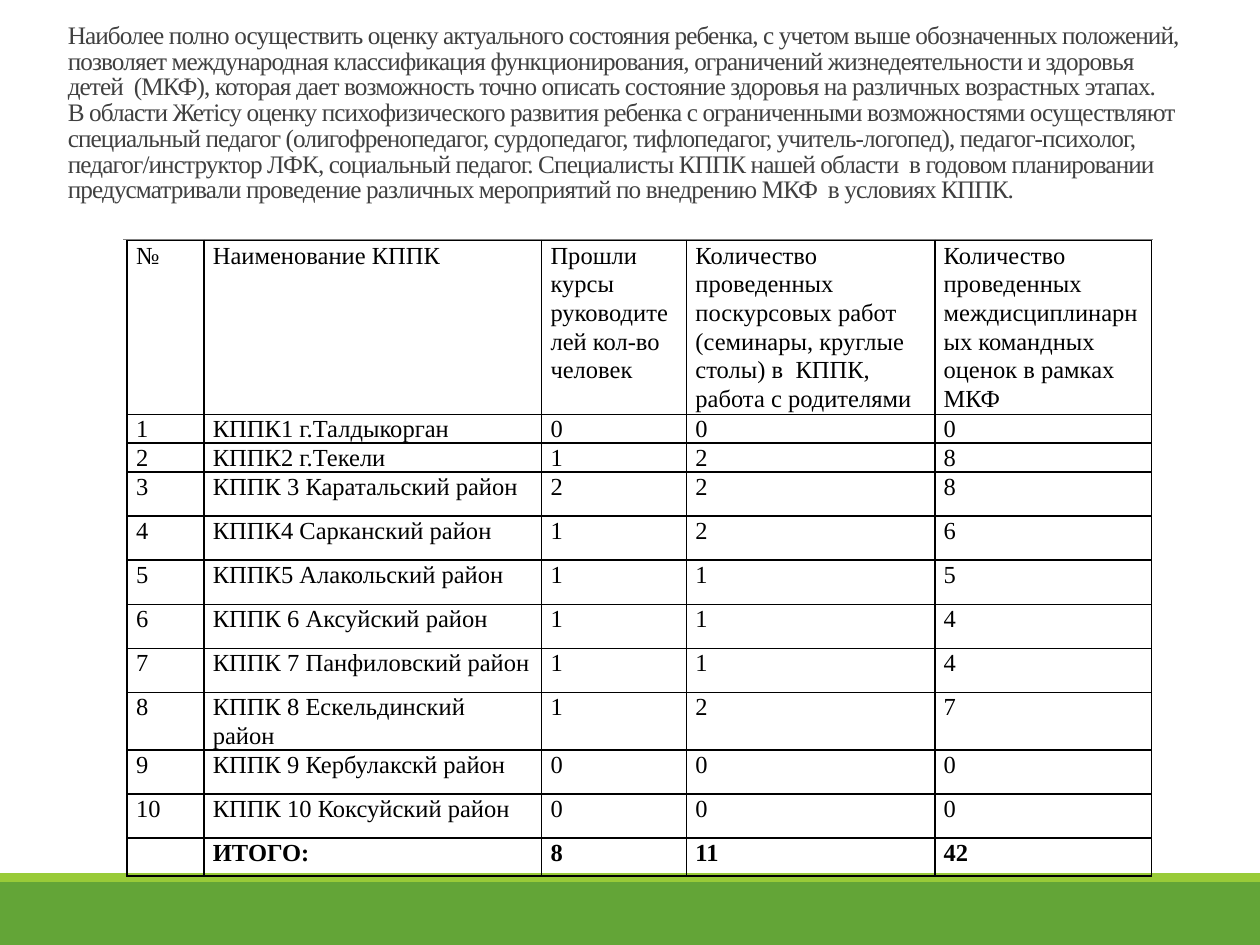
import pptx
import pptx.dml.color
import pptx.enum.shapes
import pptx.enum.text
import pptx.oxml
import pptx.oxml.ns
import pptx.util
from pptx.util import Inches

COLORS = {
    "green": "63A537",
    "lime": "99CB38",
    "rule": "808080",
    "title": "404040",
    "black": "000000",
}
FONT = "Times New Roman"

INTRO = [
    "Наиболее полно осуществить оценку актуального состояния ребенка, с учетом выше "
    "обозначенных положений, позволяет международная классификация функционирования, "
    "ограничений жизнедеятельности и здоровья детей  (МКФ), которая дает возможность "
    "точно описать состояние здоровья на различных возрастных этапах.",
    "В области Жетісу оценку психофизического развития ребенка с ограниченными "
    "возможностями осуществляют специальный педагог (олигофренопедагог, сурдопедагог, "
    "тифлопедагог, учитель-логопед), педагог-психолог, педагог/инструктор ЛФК, "
    "социальный педагог. Специалисты КППК нашей области  в годовом планировании  "
    "предусматривали проведение различных мероприятий по внедрению МКФ  в условиях КППК.",
]

HEADER = [
    "№",
    "Наименование КППК",
    "Прошли курсы руководителей кол-во человек",
    "Количество проведенных поскурсовых работ\n"
    "(семинары, круглые столы) в  КППК, работа с родителями",
    "Количество проведенных междисциплинарных командных оценок в рамках МКФ",
]
CENTRES = [
    ("КППК1 г.Талдыкорган", 0, 0, 0),
    ("КППК2 г.Текели", 1, 2, 8),
    ("КППК 3 Каратальский район", 2, 2, 8),
    ("КППК4 Сарканский район", 1, 2, 6),
    ("КППК5 Алакольский район", 1, 1, 5),
    ("КППК 6 Аксуйский район", 1, 1, 4),
    ("КППК 7 Панфиловский район", 1, 1, 4),
    ("КППК 8 Ескельдинский район", 1, 2, 7),
    ("КППК 9 Кербулакскй район", 0, 0, 0),
    ("КППК 10 Коксуйский район", 0, 0, 0),
]
TOTAL = ["", "ИТОГО:", 8, 11, 42]
COL_WIDTHS = [0.61, 2.68, 1.15, 1.97, 1.72]
ROW_HEIGHTS = [1.38] + [0.22] * 2 + [0.35] * 8 + [0.22]


def rgb(name):
    return pptx.dml.color.RGBColor.from_string(COLORS[name])


def add_run(p, text, size, color, bold=False):
    r = p.add_run()
    r.text = text
    r.font.name = FONT
    r.font.size = pptx.util.Pt(size)
    r.font.bold = bold
    r.font.color.rgb = rgb(color)
    return r


def add_footer(slide, left, top, width, height):
    """Green band with a thin lime strip along its top edge."""
    strip = 0.07
    bands = [("green", top + strip, height - strip), ("lime", top, strip)]
    for color, y, h in bands:
        sp = slide.shapes.add_shape(
            pptx.enum.shapes.MSO_SHAPE.RECTANGLE,
            Inches(left), Inches(y), Inches(width), Inches(h))
        sp.shadow.inherit = False
        sp.fill.solid()
        sp.fill.fore_color.rgb = rgb(color)
        sp.line.fill.background()


def add_rule(slide, left, top, width):
    line = slide.shapes.add_connector(
        pptx.enum.shapes.MSO_CONNECTOR.STRAIGHT,
        Inches(left), Inches(top), Inches(left + width), Inches(top))
    line.line.color.rgb = rgb("rule")
    line.line.width = pptx.util.Pt(0.5)
    line._element.spPr.append(pptx.oxml.parse_xml(
        f"<a:effectLst {pptx.oxml.ns.nsdecls('a')}/>"))


def add_intro(slide, left, top, width, height):
    sp = slide.shapes.add_textbox(
        Inches(left), Inches(top), Inches(width), Inches(height))
    tf = sp.text_frame
    tf.word_wrap = True
    tf.vertical_anchor = pptx.enum.text.MSO_ANCHOR.BOTTOM
    tf.margin_bottom = Inches(0.29)
    p = tf.paragraphs[0]
    p.line_spacing = 0.85
    for i, text in enumerate(INTRO):
        if i:
            p.add_line_break()
        r = add_run(p, text, 14.4, "title")
        r._r.get_or_add_rPr().set("spc", "-50")


def set_borders(cell):
    tcPr = cell._tc.get_or_add_tcPr()
    for i, side in enumerate(("lnL", "lnR", "lnT", "lnB")):
        tcPr.insert(i, pptx.oxml.parse_xml(
            f'<a:{side} {pptx.oxml.ns.nsdecls("a")} w="12700"><a:solidFill>'
            f'<a:srgbClr val="{COLORS["black"]}"/></a:solidFill></a:{side}>'))


def fill_cell(cell, text, bold):
    cell.margin_left = cell.margin_right = Inches(0.07)
    cell.margin_top = cell.margin_bottom = 0
    cell.fill.background()
    set_borders(cell)
    tf = cell.text_frame
    for i, line in enumerate(text.split("\n")):
        p = tf.add_paragraph() if i else tf.paragraphs[0]
        # A fixed pitch keeps every row at its planned height.
        p.line_spacing = pptx.util.Pt(16.4)
        add_run(p, line, 14, "black", bold)


def add_centres_table(slide, left, top, width, height):
    rows = [HEADER] + [(n, *c) for n, c in enumerate(CENTRES, 1)] + [TOTAL]
    table = slide.shapes.add_table(
        len(rows), len(HEADER),
        Inches(left), Inches(top), Inches(width), Inches(height)).table
    table.first_row = table.horz_banding = False
    for col, w in zip(table.columns, COL_WIDTHS):
        col.width = Inches(w)
    for row, h, values in zip(table.rows, ROW_HEIGHTS, rows):
        row.height = Inches(h)
        for cell, value in zip(row.cells, values):
            fill_cell(cell, str(value), bold=values is TOTAL)


def main():
    prs = pptx.Presentation()
    prs.slide_width = Inches(10)
    prs.slide_height = Inches(7.5)
    slide = prs.slides.add_slide(prs.slide_layouts[6])
    add_footer(slide, 0, 6.93, 10, 0.57)
    add_rule(slide, 0.98, 1.9, 8.17)
    add_intro(slide, 0.44, 0.24, 9.03, 1.67)
    add_centres_table(slide, 1.01, 1.91, sum(COL_WIDTHS), sum(ROW_HEIGHTS))
    prs.save("out.pptx")


if __name__ == "__main__":
    main()
